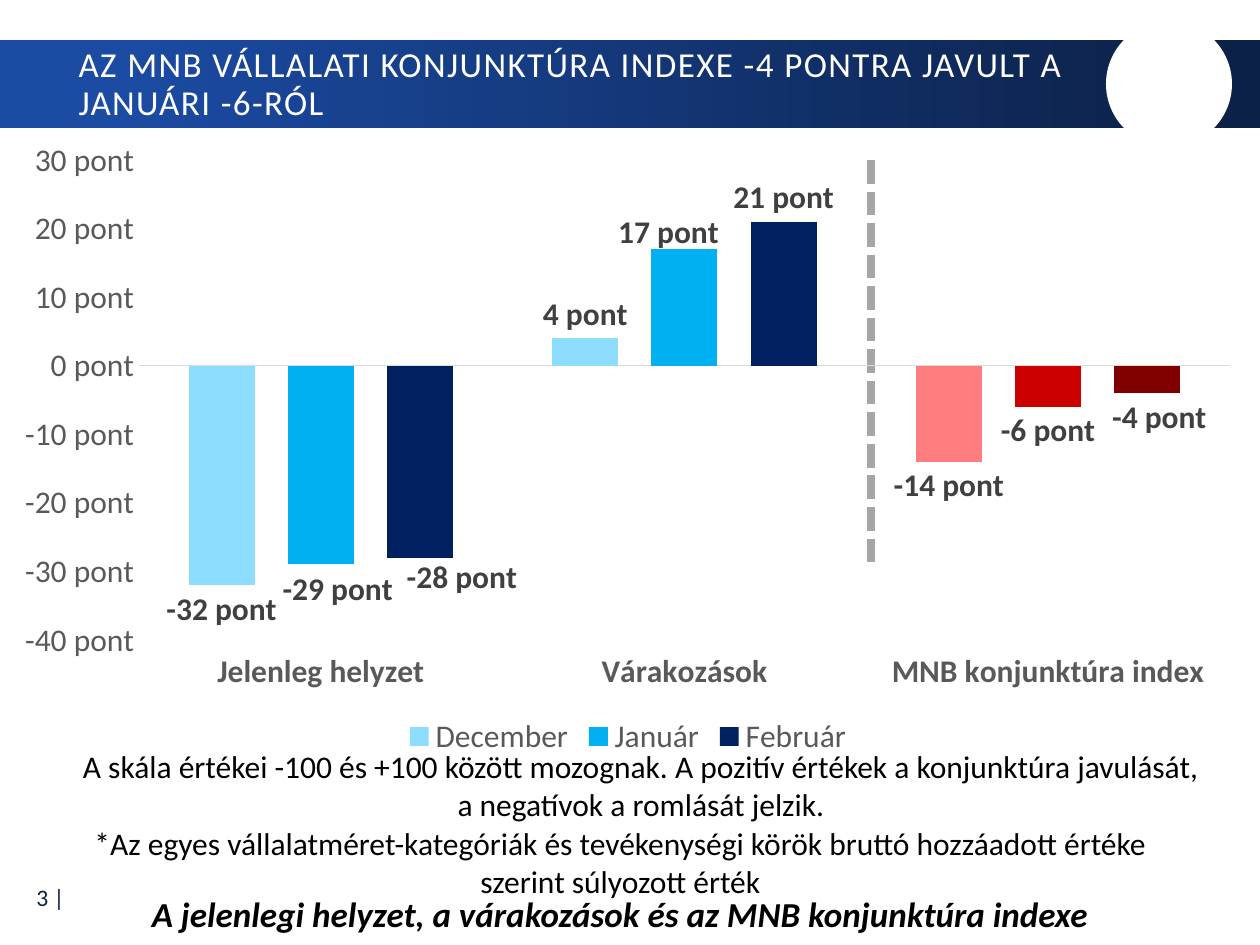
from typing import NamedTuple

from lxml.etree import SubElement
from pptx import Presentation
from pptx.chart.data import CategoryChartData
from pptx.dml.color import RGBColor
from pptx.enum.chart import (XL_CHART_TYPE as Kind, XL_LABEL_POSITION as Spot,
                             XL_LEGEND_POSITION as Side, XL_TICK_LABEL_POSITION as Tick,
                             XL_TICK_MARK as Mark)
from pptx.enum.dml import MSO_LINE as Dash
from pptx.enum.shapes import MSO_CONNECTOR as Link, MSO_SHAPE as Form
from pptx.enum.text import MSO_ANCHOR as Anchor, MSO_AUTO_SIZE as Fit, PP_ALIGN as Align
from pptx.oxml import parse_xml
from pptx.oxml.ns import nsdecls, qn
from pptx.util import Emu, Pt

FONT = "Calibri"
UNIT = 'General\\ "pont"'
WIDE, HIGH = 1260, 945


class Box(NamedTuple):
    x: int
    y: int
    w: int
    h: int


class Note(NamedTuple):
    box: Box
    text: str
    size: int = 18
    bold: bool = False


class Month(NamedTuple):
    name: str
    vals: tuple
    color: str
    last: str
    moves: dict


CHART = Box(0, 127, 1256, 635)
PLOT = Box(139, 160, 1091, 480)
GROUPS = ("Jelenleg helyzet", "Várakozások", "MNB konjunktúra index")
MONTHS = (
    Month("December", (-32, 4, -14), "8DDDFF", "FF7C80", {}),
    Month("Január", (-29, 17, -6), "00B0F0", "CC0000", {0: (17, 1), 1: (-16, 7)}),
    Month("Február", (-28, 21, -4), "002060", "800000", {0: (42, -4), 2: (12, 0)}),
)
TITLE = "AZ MNB VÁLLALATI KONJUNKTÚRA INDEXE -4 PONTRA JAVULT A JANUÁRI -6-RÓL"
NOTES = (
    Note(Box(-8, 886, 1256, 55),
         "A jelenlegi helyzet, a várakozások és az MNB konjunktúra indexe", 20, True),
    Note(Box(66, 818, 1109, 89),
         "*Az egyes vállalatméret-kategóriák és tevékenységi körök bruttó "
         "hozzáadott értéke szerint súlyozott érték"),
    Note(Box(66, 741, 1150, 89),
         "A skála értékei -100 és +100 között mozognak. A pozitív értékek "
         "a konjunktúra javulását, a negatívok a romlását jelzik."),
)


def px(n: int) -> Emu:
    """Turn pixels into EMU."""
    return Emu(round(n * 914400 / 126))


def area(box: Box) -> list:
    """Give the four lengths of a box in EMU."""
    return [px(n) for n in box]


def hue(code: str) -> RGBColor:
    """Turn a hex string into a colour."""
    return RGBColor.from_string(code)


def style(font, size: float, color: str, bold: bool = False, slant: bool = False) -> None:
    """Set the look of a font."""
    font.name, font.size = FONT, Pt(size)
    font.bold, font.italic = bold, slant
    font.color.rgb = hue(color)


def write(shape, text: str, *, size: float = 18, color: str = "000000", bold: bool = False,
          slant: bool = False, align=Align.CENTER, anchor=Anchor.TOP,
          lead: float = 1.0, space: int = 0) -> None:
    """Fill a shape with one formatted paragraph."""
    frame = shape.text_frame
    frame.word_wrap, frame.auto_size = True, Fit.NONE
    frame.vertical_anchor = anchor
    para = frame.paragraphs[0]
    para.alignment, para.line_spacing = align, lead
    run = para.add_run()
    run.text = text
    style(run.font, size, color, bold, slant)
    if space:
        run.font._element.set("spc", str(space))


def block(slide, form, box: Box):
    """Add a plain shape without line or shadow."""
    shape = slide.shapes.add_shape(form, *area(box))
    shape.shadow.inherit = False
    shape.line.fill.background()
    return shape


def banner(slide) -> None:
    """Draw the gradient band, its disc and the title."""
    fill = block(slide, Form.RECTANGLE, Box(0, 40, WIDE, 88)).fill
    fill.gradient()
    fill.gradient_angle = 0
    for stop, (at, code) in zip(fill.gradient_stops, ((0.09, "1B4BA3"), (0.95, "0C2148"))):
        stop.position, stop.color.rgb = at, hue(code)
    disc = block(slide, Form.OVAL, Box(1106, 21, 126, 126)).fill
    disc.solid()
    disc.fore_color.rgb = hue("FFFFFF")
    title = slide.shapes.title
    title.left, title.top, title.width, title.height = area(Box(66, 43, 1048, 84))
    write(title, TITLE, size=20, color="FFFFFF", align=Align.LEFT,
          anchor=Anchor.MIDDLE, lead=0.9, space=80)
    title.element.getparent().append(title.element)


def split(slide) -> None:
    """Draw the dashed divider."""
    rule = slide.shapes.add_connector(Link.STRAIGHT, px(871), px(160), px(871), px(570))
    rule.line.color.rgb = hue("A6A6A6")
    rule.line.width, rule.line.dash_style = Pt(4.5), Dash.SQUARE_DOT
    SubElement(rule.element.spPr, qn("a:effectLst"))


def layout(parts: dict, inner: bool = False):
    """Build a manual chart layout."""
    head = '<c:layoutTarget val="inner"/><c:xMode val="edge"/><c:yMode val="edge"/>'
    body = "".join(f'<c:{key} val="{val:.4f}"/>' for key, val in parts.items())
    return parse_xml(f'<c:layout {nsdecls("c")}><c:manualLayout>{head if inner else ""}'
                     f'{body}</c:manualLayout></c:layout>')


def paint(series, month: Month) -> None:
    """Colour and label the bars of one month."""
    series.invert_if_negative = False
    for fill, code in ((series.format.fill, month.color),
                       (series.points[2].format.fill, month.last)):
        fill.solid()
        fill.fore_color.rgb = hue(code)
    tags = series.data_labels
    tags.show_value, tags.position = True, Spot.OUTSIDE_END
    tags.number_format, tags.number_format_is_linked = UNIT, False
    style(tags.font, 18, "404040", True)
    for i, (dx, dy) in month.moves.items():
        tag = series.points[i].data_label
        tag.position = Spot.OUTSIDE_END
        style(tag.font, 18, "404040", True)
        node = series._element.xpath(f'c:dLbls/c:dLbl[c:idx/@val="{i}"]')[0]
        node.insert(1, layout({"x": dx / CHART.w, "y": dy / CHART.h}))
        form = parse_xml(f'<c:numFmt {nsdecls("c")} sourceLinked="0"/>')
        form.set("formatCode", UNIT)
        node.insert(2, form)


def graph(slide) -> None:
    """Add the column chart."""
    data = CategoryChartData(number_format=UNIT)
    data.categories = GROUPS
    for month in MONTHS:
        data.add_series(month.name, month.vals)
    chart = slide.shapes.add_chart(Kind.COLUMN_CLUSTERED, *area(CHART), data).chart
    style(chart.font, 18, "000000")
    chart.has_title = False
    chart.has_legend = True
    chart.legend.position, chart.legend.include_in_layout = Side.BOTTOM, False
    style(chart.legend.font, 18, "595959")
    plot = chart.plots[0]
    plot.gap_width, plot.overlap, plot.vary_by_categories = 150, -50, False
    for series, month in zip(plot.series, MONTHS):
        paint(series, month)
    cat, val = chart.category_axis, chart.value_axis
    for axis in (cat, val):
        axis.major_tick_mark = axis.minor_tick_mark = Mark.NONE
        axis.has_major_gridlines = False
        style(axis.tick_labels.font, 18, "595959", axis is cat)
    cat.tick_label_position = Tick.LOW
    cat.format.line.color.rgb, cat.format.line.width = hue("D9D9D9"), Pt(0.75)
    val.minimum_scale, val.maximum_scale, val.major_unit = -40, 30, 10
    val.format.line.fill.background()
    val.tick_labels.number_format, val.tick_labels.number_format_is_linked = UNIT, False
    zone = chart._chartSpace.xpath("c:chart/c:plotArea")[0]
    for old in zone.findall(qn("c:layout")):
        zone.remove(old)
    zone.insert(0, layout({"x": (PLOT.x - CHART.x) / CHART.w, "y": (PLOT.y - CHART.y) / CHART.h,
                           "w": PLOT.w / CHART.w, "h": PLOT.h / CHART.h}, True))


def main() -> None:
    """Build and save the slide."""
    deck = Presentation()
    deck.slide_width, deck.slide_height = px(WIDE), px(HIGH)
    slide = deck.slides.add_slide(deck.slide_layouts[5])
    page = slide.shapes.add_textbox(*area(Box(1, 874, 76, 47)))
    write(page, "3 |", size=13.5, color="0C2148", align=Align.RIGHT, anchor=Anchor.MIDDLE)
    banner(slide)
    for note in NOTES:
        write(slide.shapes.add_textbox(*area(note.box)), note.text,
              size=note.size, bold=note.bold, slant=note.bold)
    split(slide)
    graph(slide)
    deck.save("out.pptx")


if __name__ == "__main__":
    main()
